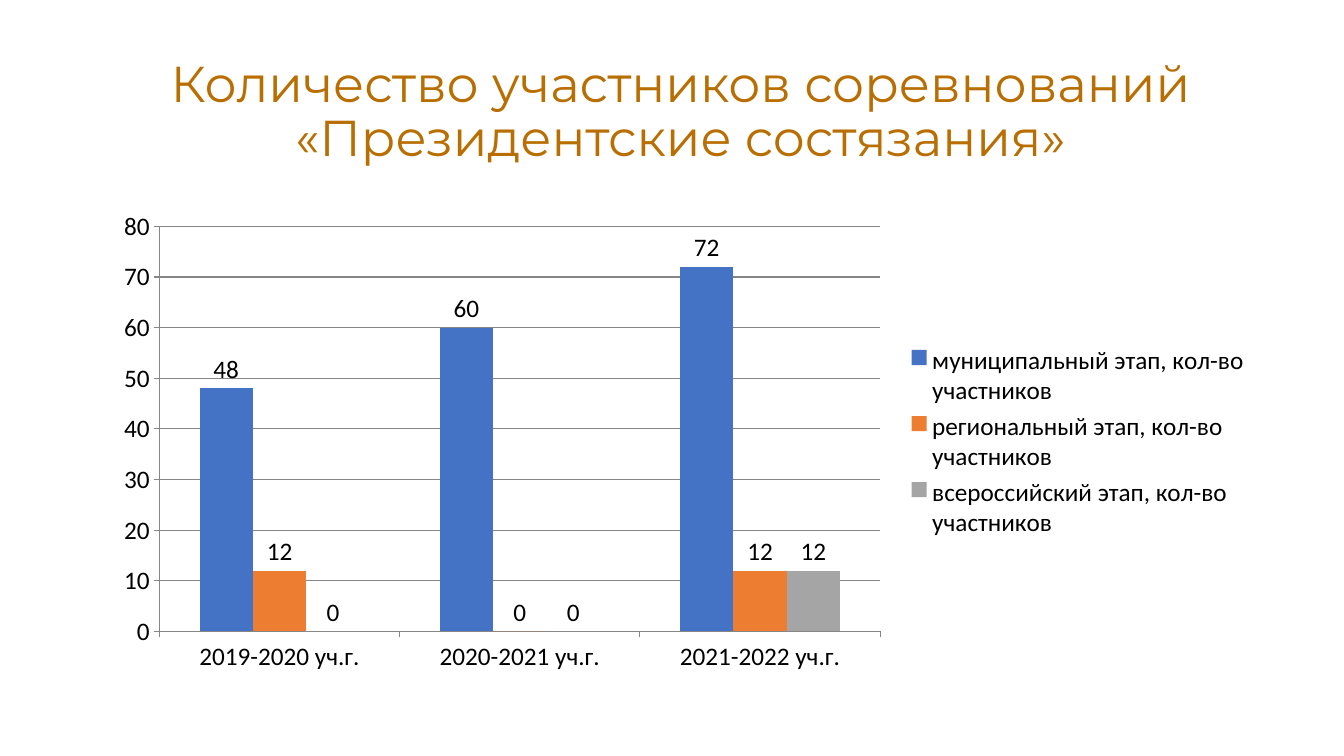
from pptx import Presentation
from pptx.chart.data import CategoryChartData
from pptx.dml.color import RGBColor
from pptx.enum import chart as ch, text
from pptx.util import Inches, Pt

OCHRE = RGBColor(0xB8, 0x6E, 0x00)
BLACK = RGBColor(0x00, 0x00, 0x00)
GRAY = RGBColor(0x86, 0x86, 0x86)
BLUE = RGBColor(0x44, 0x72, 0xC4)
ORANGE = RGBColor(0xED, 0x7D, 0x31)
SILVER = RGBColor(0xA5, 0xA5, 0xA5)

STAGES = [
    ("муниципальный", (48, 60, 72), BLUE),
    ("региональный", (12, 0, 12), ORANGE),
    ("всероссийский", (0, 0, 12), SILVER),
]

prs = Presentation()
prs.slide_width, prs.slide_height = Inches(13.33), Inches(7.5)
slide = prs.slides.add_slide(prs.slide_layouts[5])

# Title
title = slide.shapes.title
title.left, title.top = Inches(1), Inches(0.4)
title.width, title.height = Inches(11.5), Inches(1.45)
title.text_frame.text = "Количество участников соревнований «Президентские состязания»"
title.text_frame.vertical_anchor = text.MSO_ANCHOR.MIDDLE
heading = title.text_frame.paragraphs[0]
heading.alignment = text.PP_ALIGN.CENTER
heading.line_spacing = 0.9
heading_font = heading.runs[0].font
heading_font.name, heading_font.size = "Montserrat", Pt(36)
heading_font.color.rgb = OCHRE

# Participants by stage and school year
participants = CategoryChartData()
participants.categories = [f"{year}-{year + 1} уч.г." for year in range(2019, 2022)]
for stage, counts, _ in STAGES:
    participants.add_series(f"{stage} этап, кол-во участников", counts)
chart = slide.shapes.add_chart(
    ch.XL_CHART_TYPE.COLUMN_CLUSTERED,
    Inches(1), Inches(2), Inches(11.5), Inches(4.76), participants).chart
chart.has_title = False
chart.font.name, chart.font.size = "Calibri", Pt(18)
chart.font.color.rgb = BLACK

chart.has_legend = True
chart.legend.position = ch.XL_LEGEND_POSITION.RIGHT
chart.legend.include_in_layout = False

counts_axis = chart.value_axis
counts_axis.minimum_scale, counts_axis.maximum_scale = 0, 80
counts_axis.major_unit = 10
counts_axis.has_major_gridlines = True
for line in (counts_axis.major_gridlines.format.line,
             counts_axis.format.line, chart.category_axis.format.line):
    line.color.rgb = GRAY
    line.width = Pt(0.75)
for axis in (counts_axis, chart.category_axis):
    axis.major_tick_mark = ch.XL_TICK_MARK.OUTSIDE

columns = chart.plots[0]
columns.gap_width, columns.overlap = 150, 0
columns.vary_by_categories = False
for series, (_, _, color) in zip(columns.series, STAGES):
    series.format.fill.solid()
    series.format.fill.fore_color.rgb = color
    series.data_labels.show_value = True
    series.data_labels.position = ch.XL_LABEL_POSITION.OUTSIDE_END

prs.save("out.pptx")
